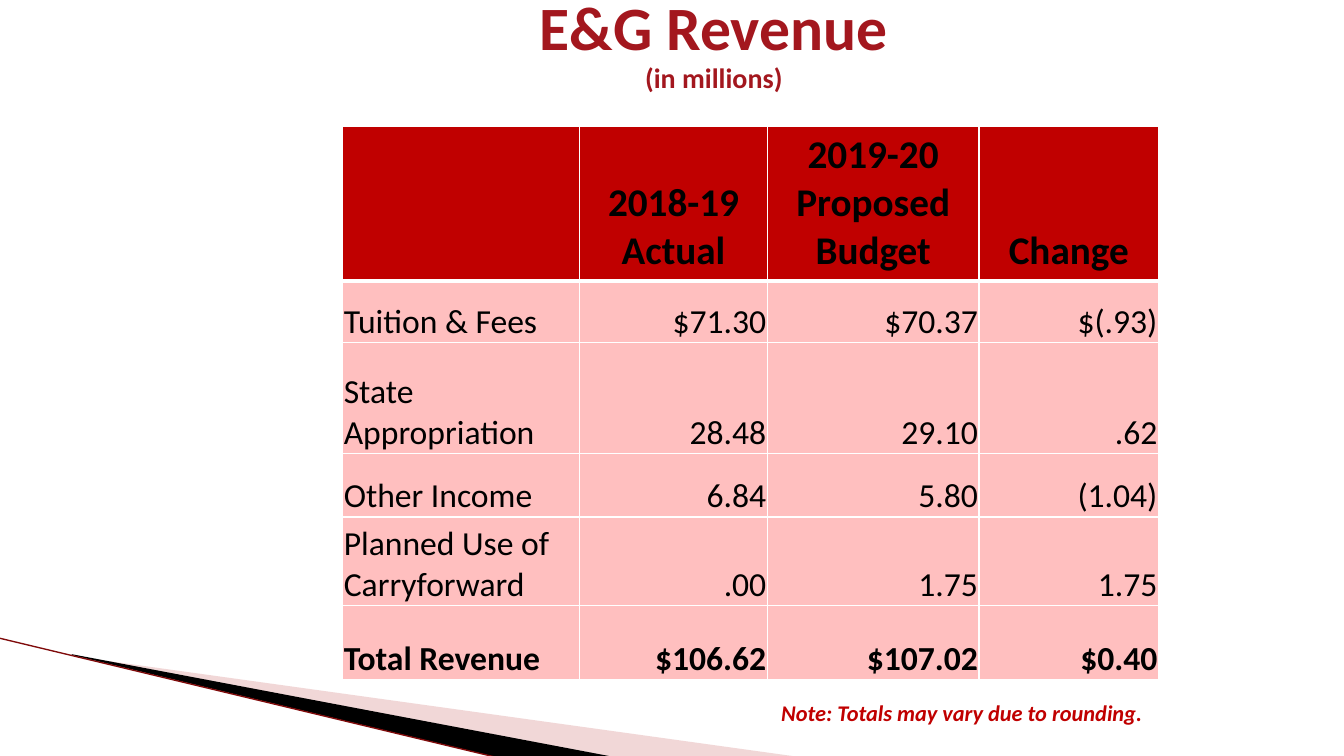
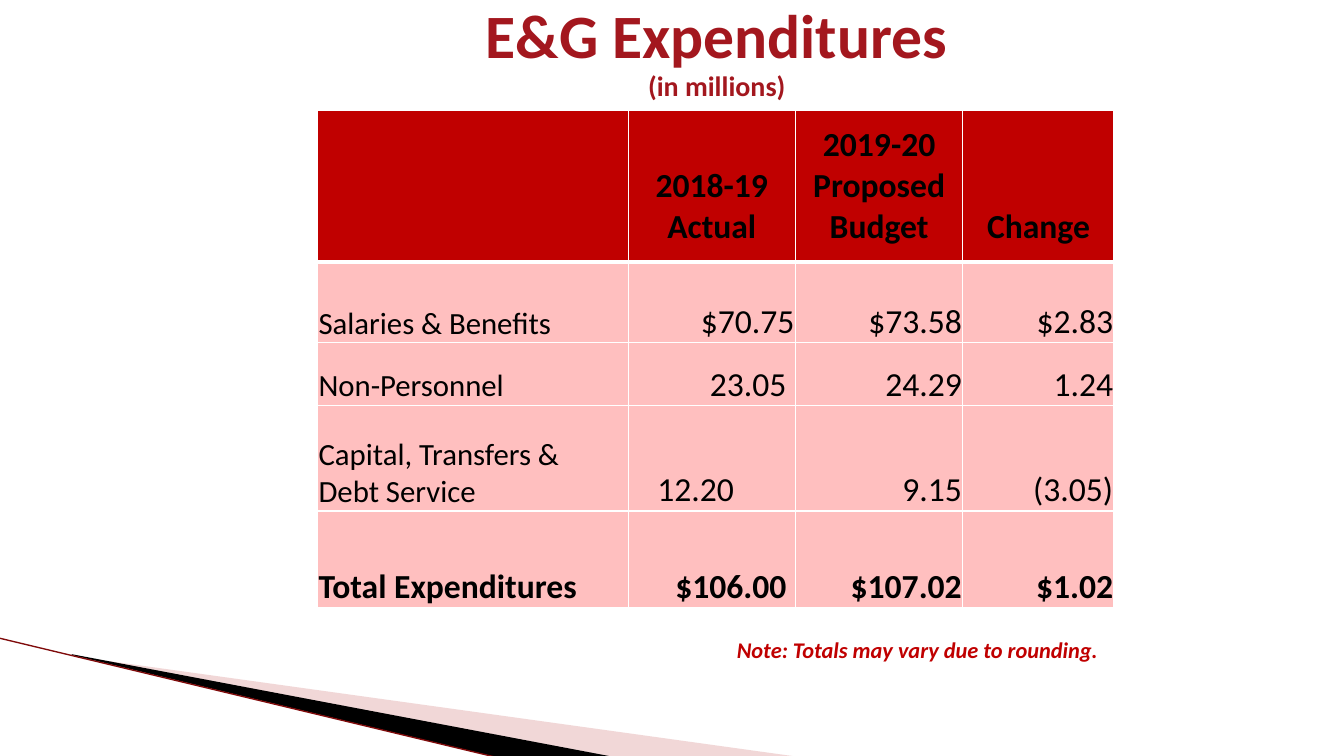
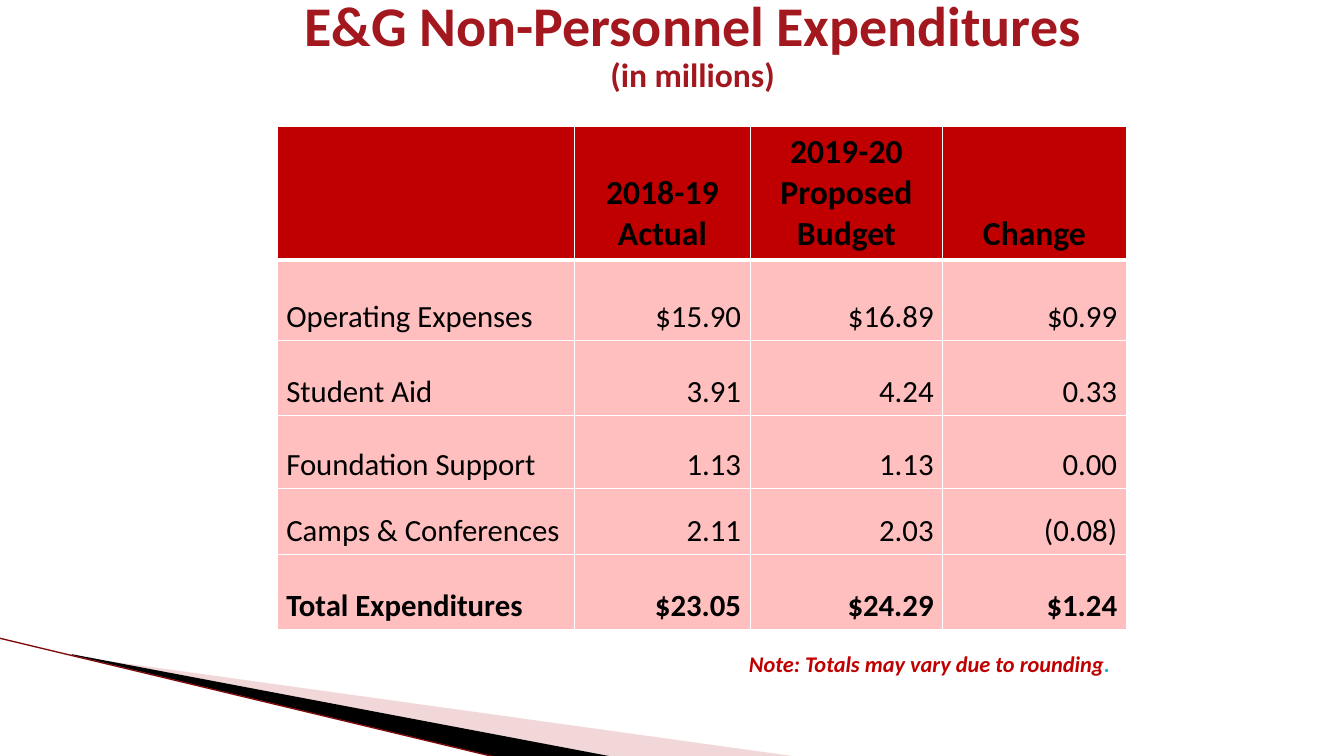
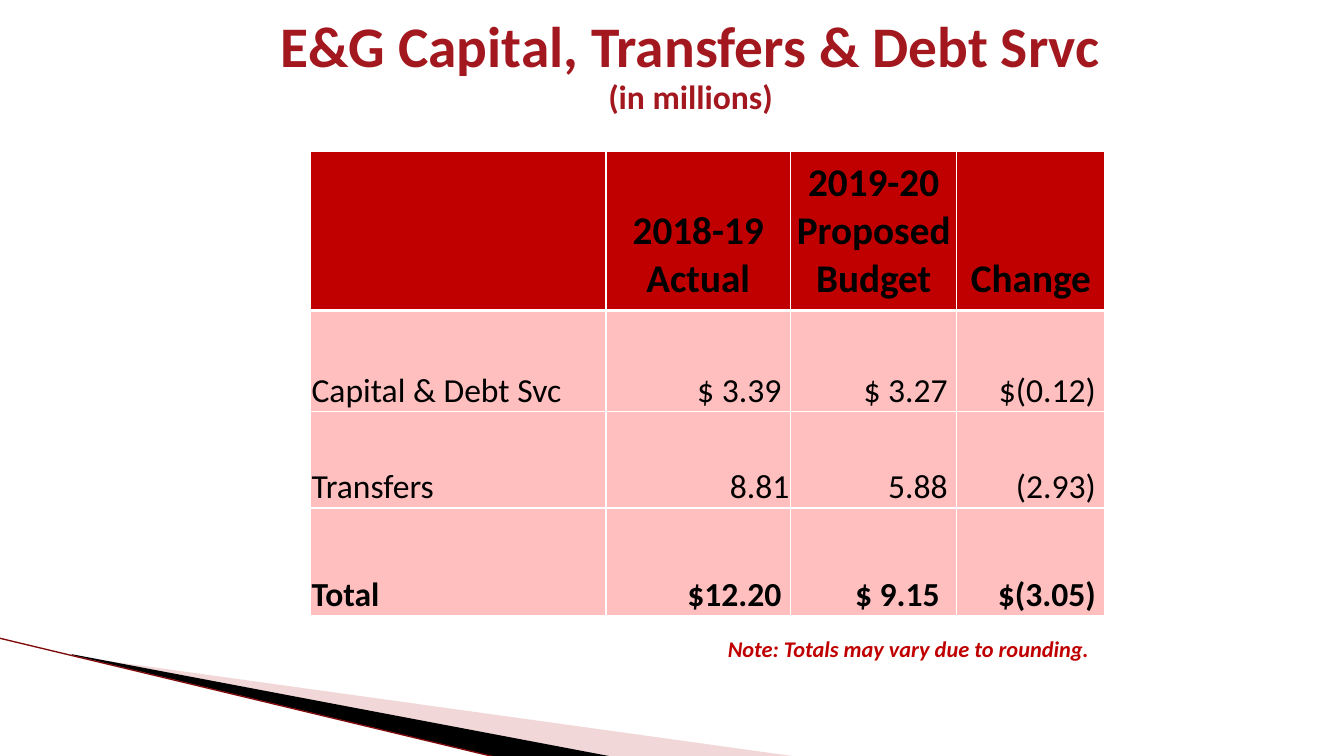
from lxml.etree import SubElement
from pptx import Presentation
from pptx.dml.color import RGBColor
from pptx.enum.shapes import MSO_CONNECTOR
from pptx.enum.text import MSO_ANCHOR, MSO_AUTO_SIZE, PP_ALIGN
from pptx.oxml.ns import qn
from pptx.util import Pt

PX = 9144  # EMU per px, 100 px to the inch
SLIDE_SIZE = (1333, 750)
FONT = "Calibri"
COLORS = {
    "title": "A3171E", "header": "C00000", "body": "FFBFBF", "text": "000000",
    "rule": "FFFFFF", "note": "C00000", "accent": "1FAECD",
    "wedge": "DD9D9D", "blade": "000000", "edge": "7F0A0A",
}
HEADINGS = ["", "2018-19 Actual", "2019-20 Proposed Budget", "Change"]
NOTE_WIDTH, NOTE_HEIGHT = 383, 37
LINE_HEIGHT = 1.22

# A cell is its text, or (text, right inset) where it is set in from the column edge.
BUDGETS = [
    {
        "title": "E&G Revenue", "title_box": (357, 0, 702, 91), "title_sizes": (44, 20),
        "origin": (340, 125), "columns": [235, 186, 210, 178],
        "heights": [154, 61, 110, 63, 88, 73], "sizes": (28, 24, 24), "inset": (1, 1, 0),
        "rows": [
            ["Tuition & Fees", "$71.30", "$70.37", "$(.93)"],
            ["State Appropriation", "28.48", "29.10", ".62"],
            ["Other Income", "6.84", "5.80", "(1.04)"],
            ["Planned Use of Carryforward", ".00", "1.75", "1.75"],
            ["Total Revenue", "$106.62", "$107.02", "$0.40"],
        ],
        "note_gap": 15, "stop_color": "note",
    },
    {
        "title": "E&G Expenditures", "title_box": (211, 8, 1000, 91), "title_sizes": (44, 20),
        "origin": (315, 110), "columns": [308, 166, 166, 150],
        "heights": [150, 80, 62, 105, 96], "sizes": (24, 22, 24), "inset": (1, 1, 0),
        "rows": [
            ["Salaries & Benefits", "$70.75", "$73.58", "$2.83"],
            ["Non-Personnel", ("23.05", 9), "24.29", "1.24"],
            ["Capital, Transfers &\nDebt Service", ("12.20", 61), "9.15", "(3.05)"],
            ["Total Expenditures", ("$106.00", 9), "$107.02", "$1.02"],
        ],
        "note_gap": 23, "stop_color": "note",
    },
    {
        "title": "E&G Non-Personnel Expenditures", "title_box": (233, 1, 908, 90),
        "title_sizes": (40, 24),
        "origin": (275, 125), "columns": [295, 174, 191, 182],
        "heights": [133, 80, 74, 73, 65, 75], "sizes": (24, 22, 22), "inset": (9, 5, 5),
        "rows": [
            ["Operating Expenses", "$15.90", "$16.89", "$0.99"],
            ["Student Aid", "3.91", "4.24", "0.33"],
            ["Foundation Support", "1.13", "1.13", "0.00"],
            ["Camps & Conferences", "2.11", "2.03", "(0.08)"],
            ["Total Expenditures", "$23.05", "$24.29", "$1.24"],
        ],
        "note_gap": 15, "stop_color": "accent",
    },
    {
        "title": "E&G Capital, Transfers & Debt Srvc", "title_box": (235, 22, 900, 90),
        "title_sizes": (41, 24),
        "origin": (308, 150), "columns": [293, 183, 165, 147],
        "heights": [158, 100, 96, 107], "sizes": (28, 24, 24), "inset": (1, 1, 0),
        "rows": [
            ["Capital & Debt Svc", ("$ 3.39", 9), ("$ 3.27", 9), ("$(0.12)", 9)],
            ["Transfers", "8.81", ("5.88", 9), ("(2.93)", 9)],
            ["Total", ("$12.20", 9), ("$ 9.15", 17), ("$(3.05)", 9)],
        ],
        "note_gap": 14, "stop_color": "note",
    },
]


def px(*lengths):
    return [round(length * PX) for length in lengths]


def set_font(font, color, **values):
    for name, value in {"name": FONT, "bold": True, **values}.items():
        setattr(font, name, value)
    font.color.rgb = RGBColor.from_string(COLORS[color])


def add_polygon(slide, points, color, opacity=100):
    builder = slide.shapes.build_freeform(*points[0], scale=PX)
    builder.add_line_segments(points[1:], close=True)
    shape = builder.convert_to_shape()
    shape.shadow.inherit = False
    shape.line.fill.background()
    shape.fill.solid()
    shape.fill.fore_color.rgb = RGBColor.from_string(COLORS[color])
    if opacity < 100:
        solid = shape.fill._xPr.find(qn("a:solidFill"))
        SubElement(solid[0], qn("a:alpha"), val=str(opacity * 1000))


def add_corner_blades(slide):
    """Draw the tapering blades in the lower left corner."""
    add_polygon(slide, [(73, 651), (793, 751), (608, 751), (73, 650)], "wedge", 40)
    add_polygon(slide, [(71, 649), (609, 751), (496, 752), (72, 650)], "blade")
    edge = slide.shapes.add_connector(MSO_CONNECTOR.STRAIGHT, *px(-1, 633, 495, 752))
    edge.line.width = Pt(0.95)
    edge.line.color.rgb = RGBColor.from_string(COLORS["edge"])
    SubElement(edge._element.spPr, qn("a:effectLst"))


def add_title(slide, box, title, sizes):
    frame = slide.shapes.add_textbox(*px(*box)).text_frame
    frame.word_wrap = True
    frame.vertical_anchor = MSO_ANCHOR.MIDDLE
    frame.text = f"{title}\n(in millions)"
    for paragraph, size in zip(frame.paragraphs, sizes):
        paragraph.alignment = PP_ALIGN.CENTER
        paragraph.line_spacing = 0.9
        set_font(paragraph.runs[0].font, "title", size=Pt(size))


def set_borders(cell, top, bottom):
    """Rule the cell in white, with the given top and bottom widths in points."""
    properties = cell._tc.get_or_add_tcPr()
    widths = {"a:lnL": 1, "a:lnR": 1, "a:lnT": top, "a:lnB": bottom}
    for index, (tag, width) in enumerate(widths.items()):
        border = SubElement(properties, qn(tag), w=str(Pt(width)))
        fill = SubElement(border, qn("a:solidFill"))
        SubElement(fill, qn("a:srgbClr"), val=COLORS["rule"])
        properties.insert(index, border)


def fill_cell(cell, text, fill, alignment, size, bold, insets):
    cell.text = text
    cell.vertical_anchor = MSO_ANCHOR.BOTTOM
    cell.fill.solid()
    cell.fill.fore_color.rgb = RGBColor.from_string(COLORS[fill])
    for side, inset in zip(("left", "top", "right", "bottom"), px(*insets)):
        setattr(cell, f"margin_{side}", inset)
    for paragraph in cell.text_frame.paragraphs:
        paragraph.alignment = alignment
        set_font(paragraph.font, "text", size=Pt(size), bold=bold)
        for run in paragraph.runs:
            set_font(run.font, "text", size=Pt(size), bold=bold)


def add_budget_table(slide, origin, columns, heights, rows, sizes, inset):
    box = px(*origin, sum(columns), sum(heights))
    table = slide.shapes.add_table(len(heights), len(columns), *box).table
    table.first_row = table.horz_banding = False
    for column, width in zip(table.columns, px(*columns)):
        column.width = width
    for row, height in zip(table.rows, px(*heights)):
        row.height = height

    header_size, label_size, number_size = sizes
    side, top, bottom = inset
    # The tallest heading has three lines; they stand centred in the header row.
    header_gap = (heights[0] - 3 * LINE_HEIGHT * header_size * 100 / 72) / 2
    for column, heading in enumerate(HEADINGS):
        cell = table.cell(0, column)
        fill_cell(cell, heading, "header", PP_ALIGN.CENTER, header_size, True,
                  (side, 1, side, header_gap))
        set_borders(cell, 1, 3)
    for row, values in enumerate(rows, 1):
        is_total = row == len(rows)
        for column, value in enumerate(values):
            text, right = value if isinstance(value, tuple) else (value, side)
            is_label = column == 0
            cell = table.cell(row, column)
            fill_cell(cell, text, "body",
                      PP_ALIGN.LEFT if is_label else PP_ALIGN.RIGHT,
                      label_size if is_label and not is_total else number_size,
                      is_total, (side, top, right, bottom))
            set_borders(cell, 3 if row == 1 else 1, 1)


def add_rounding_note(slide, right, top, stop_color):
    box = px(right - NOTE_WIDTH, top, NOTE_WIDTH, NOTE_HEIGHT)
    frame = slide.shapes.add_textbox(*box).text_frame
    frame.word_wrap = False
    frame.auto_size = MSO_AUTO_SIZE.SHAPE_TO_FIT_TEXT
    parts = [("Note: Totals may vary due to rounding", "note"), (".", stop_color)]
    for text, color in parts:
        run = frame.paragraphs[0].add_run()
        run.text = text
        set_font(run.font, color, size=Pt(16), italic=True)


def add_budget_slide(presentation, budget):
    slide = presentation.slides.add_slide(presentation.slide_layouts[6])
    add_corner_blades(slide)
    add_title(slide, budget["title_box"], budget["title"], budget["title_sizes"])
    left, top = budget["origin"]
    columns, heights = budget["columns"], budget["heights"]
    add_budget_table(slide, (left, top), columns, heights, budget["rows"],
                     budget["sizes"], budget["inset"])
    add_rounding_note(slide, left + sum(columns) - 1,
                      top + sum(heights) + budget["note_gap"], budget["stop_color"])


def main():
    presentation = Presentation()
    presentation.slide_width, presentation.slide_height = px(*SLIDE_SIZE)
    for budget in BUDGETS:
        add_budget_slide(presentation, budget)
    presentation.save("out.pptx")


if __name__ == "__main__":
    main()
